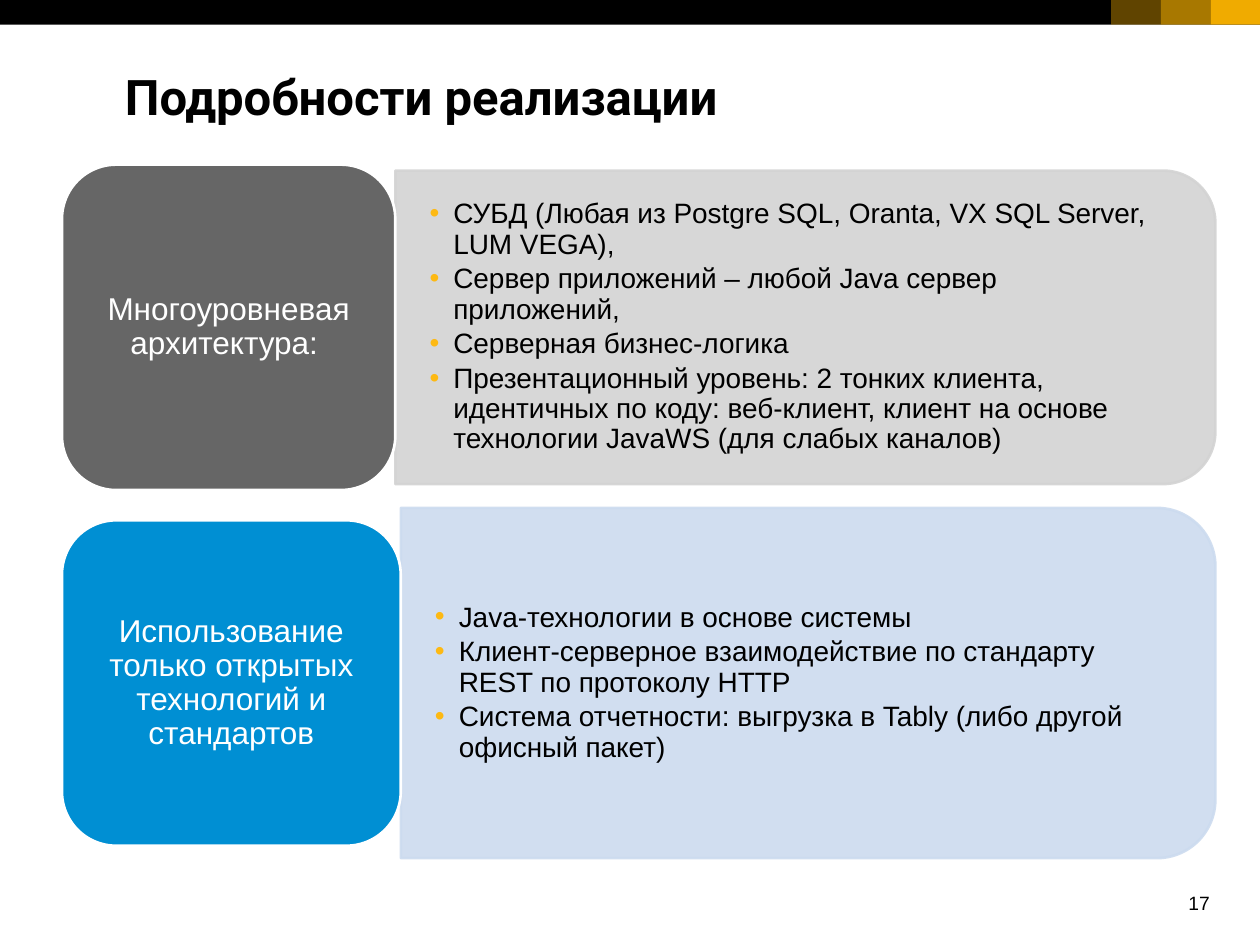
from lxml.etree import SubElement
from pptx import Presentation
from pptx.dml.color import RGBColor
from pptx.enum.shapes import MSO_SHAPE as Shape
from pptx.enum.text import MSO_ANCHOR as Anchor, PP_ALIGN as Align
from pptx.oxml.ns import qn
from pptx.util import Cm, Pt

# Content
TITLE = "Подробности реализации"
PAGE_NUMBER = "17"
ROWS = [
    {
        "label": "Многоуровневая архитектура: ",
        "bullets": [
            "СУБД (Любая из Postgre SQL, Oranta, VX SQL Server, LUM VEGA),",
            "Сервер приложений – любой Java сервер приложений,",
            "Серверная бизнес-логика",
            "Презентационный уровень: 2 тонких клиента, идентичных по коду: "
            "веб-клиент, клиент на основе технологии JavaWS (для слабых каналов)",
        ],
        "fill": "gray", "tint": "light gray",
        "middle": 6.6, "label_width": 6.72, "panel_height": 6.32,
    },
    {
        "label": "Использование только открытых технологий и стандартов",
        "bullets": [
            "Java-технологии в основе системы",
            "Клиент-серверное взаимодействие по стандарту REST по протоколу HTTP",
            "Система отчетности: выгрузка в Tably (либо другой офисный пакет)",
        ],
        "fill": "blue", "tint": "light blue",
        "middle": 13.77, "label_width": 6.83, "panel_height": 7.06,
    },
]
COLORS = {
    "black": "000000", "white": "FFFFFF", "gold": "F0AB00", "bullet": "FDB913",
    "gray": "666666", "light gray": "D3D3D3", "blue": "008FD3", "light blue": "CCDBEF",
}

# Layout, in centimetres
PAGE_WIDTH, PAGE_HEIGHT = 25.4, 19.05
BAR_HEIGHT, BAR_CELL = 0.5, 1.0
BAR_STEPS = [(22.4, 40), (23.4, 70), (24.4, 100)]  # left, opacity in percent
LABEL_LEFT, LABEL_HEIGHT = 1.25, 6.56
PANEL_RIGHT, PANEL_PAD = 24.5, 0.3
HANG = 0.48


def color(name):
    return RGBColor.from_string(COLORS[name])


def set_opacity(fill_parent, percent):
    for node in fill_parent.iter(qn("a:srgbClr")):
        SubElement(node, qn("a:alpha"), val=str(percent * 1000))


def add_block(page, kind, left, top, width, height, fill, opacity=100, line=None):
    block = page.shapes.add_shape(kind, Cm(left), Cm(top), Cm(width), Cm(height))
    block.shadow.inherit = False
    block.fill.solid()
    block.fill.fore_color.rgb = color(fill)
    if line:
        block.line.color.rgb = color(line)
        block.line.width = Pt(1.5)
    else:
        block.line.fill.background()
    if opacity < 100:
        set_opacity(block.element.spPr, opacity)
    return block


def set_frame(box, across=0, down=0, anchor=Anchor.TOP):
    frame = box.text_frame
    frame.word_wrap = True
    frame.vertical_anchor = anchor
    frame.margin_left = frame.margin_right = Cm(across)
    frame.margin_top = frame.margin_bottom = Cm(down)
    return frame


def add_text_box(page, left, top, width, height, **frame_options):
    box = page.shapes.add_textbox(Cm(left), Cm(top), Cm(width), Cm(height))
    return set_frame(box, **frame_options)


def add_span(para, text, size, fill="black", font="Arial", bold=False):
    span = para.add_run()
    span.text = text
    span.font.size = Pt(size)
    span.font.name = font
    span.font.bold = bold
    span.font.color.rgb = color(fill)


def add_bullet(para):
    props = para._p.get_or_add_pPr()
    props.set("marL", str(Cm(HANG)))
    props.set("indent", str(-Cm(HANG)))
    SubElement(SubElement(props, qn("a:buClr")), qn("a:srgbClr"), val=COLORS["bullet"])
    SubElement(props, qn("a:buFont"), typeface="Arial")
    SubElement(props, qn("a:buChar"), char="•")


def add_row(page, row):
    middle, height = row["middle"], row["panel_height"]
    left = LABEL_LEFT + row["label_width"]
    top = middle - height / 2
    width = PANEL_RIGHT - left

    # Panel: drawn upright, then turned so the round corners face right
    panel = add_block(page, Shape.ROUND_2_SAME_RECTANGLE,
                      left + (width - height) / 2, middle - width / 2,
                      height, width, row["tint"], 90, row["tint"])
    panel.rotation = 90

    # Bullets on the panel
    frame = add_text_box(page, left, top + PANEL_PAD, width - PANEL_PAD,
                         height - 2 * PANEL_PAD, across=0.69, down=0.36,
                         anchor=Anchor.MIDDLE)
    for index, text in enumerate(row["bullets"]):
        para = frame.add_paragraph() if index else frame.paragraphs[0]
        add_bullet(para)
        para.line_spacing = 0.9
        para.space_after = Pt(2.6)
        add_span(para, text, 16)

    # Label
    label = add_block(page, Shape.ROUNDED_RECTANGLE, LABEL_LEFT,
                      middle - LABEL_HEIGHT / 2, row["label_width"], LABEL_HEIGHT,
                      row["fill"], line="white")
    para = set_frame(label, 0.18, 0.1, Anchor.MIDDLE).paragraphs[0]
    para.alignment = Align.CENTER
    para.line_spacing = 0.9
    add_span(para, row["label"], 18, "white")


def main():
    deck = Presentation()
    deck.slide_width, deck.slide_height = Cm(PAGE_WIDTH), Cm(PAGE_HEIGHT)
    page = deck.slides.add_slide(deck.slide_layouts[6])

    # Top bar
    add_block(page, Shape.RECTANGLE, 0, 0, PAGE_WIDTH, BAR_HEIGHT, "black")
    for left, opacity in BAR_STEPS:
        add_block(page, Shape.RECTANGLE, left, 0, BAR_CELL, BAR_HEIGHT, "gold", opacity)

    # Title and page number
    title = add_text_box(page, 2.52, 1.35, 22.88, 1.2).paragraphs[0]
    add_span(title, TITLE, 28, font="Roboto", bold=True)
    number = add_text_box(page, 23.67, 17.96, 0.72, 0.48).paragraphs[0]
    number.alignment = Align.RIGHT
    add_span(number, PAGE_NUMBER, 11)

    for row in ROWS:
        add_row(page, row)

    deck.save("out.pptx")


if __name__ == "__main__":
    main()
